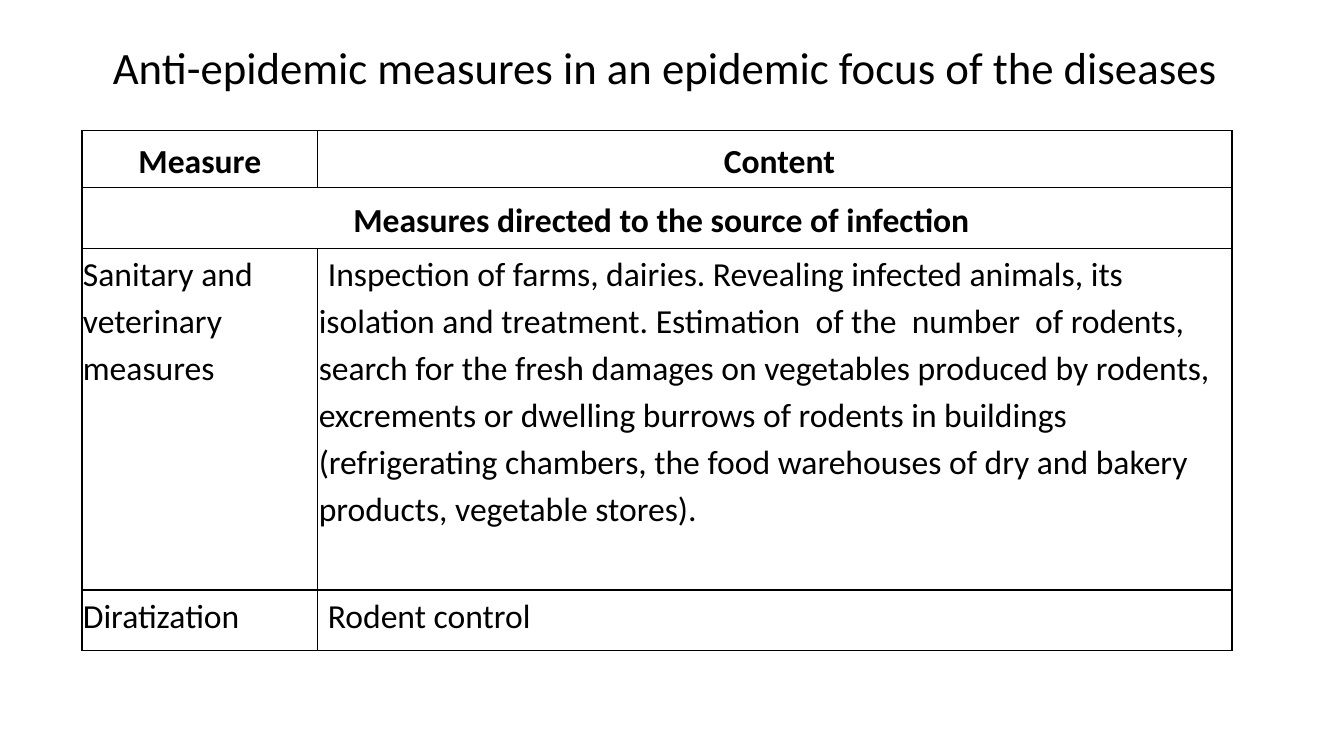
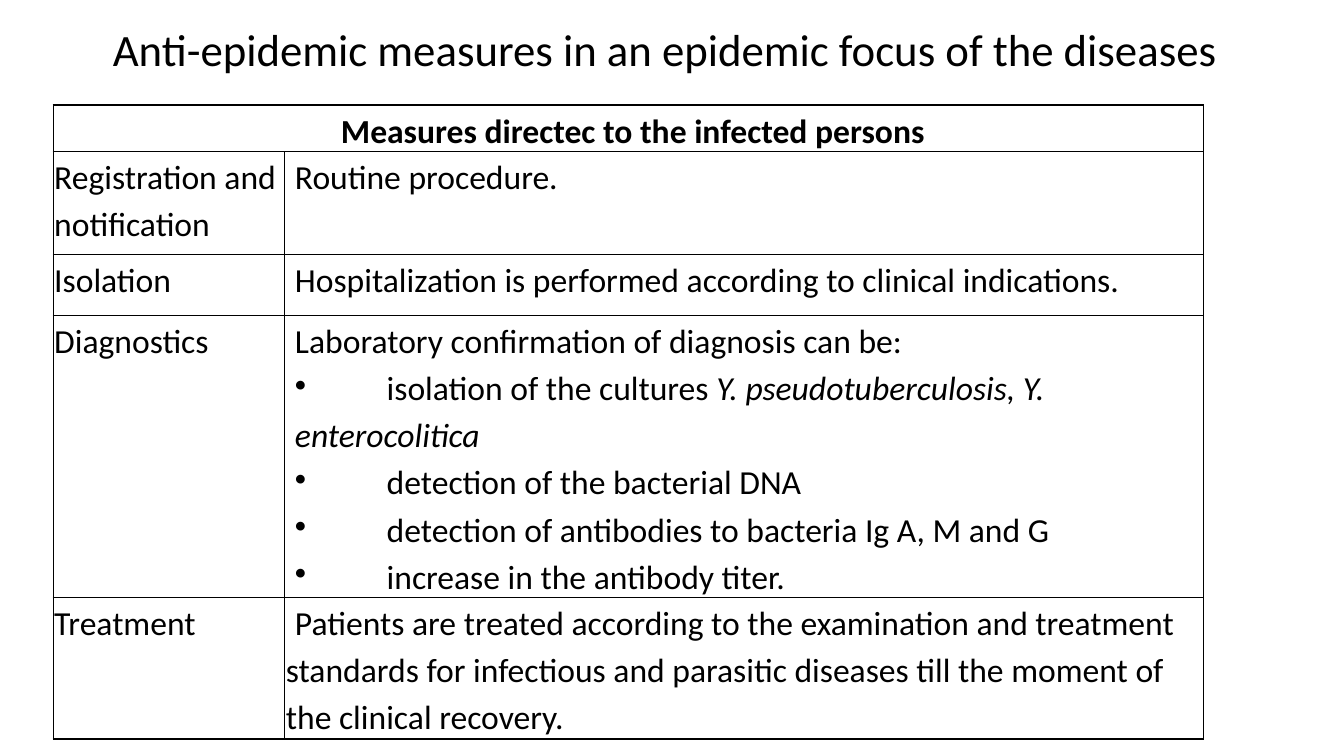
from dataclasses import dataclass

import lxml.etree
import pptx
import pptx.dml.color
import pptx.enum.text
import pptx.oxml.ns
import pptx.presentation
import pptx.slide
import pptx.table
import pptx.text.text
import pptx.util

Pt = pptx.util.Pt
qn = pptx.oxml.ns.qn
Align = pptx.enum.text.PP_ALIGN
Anchor = pptx.enum.text.MSO_ANCHOR

COLORS = {"text": "000000", "border": "000000", "cell": "FFFFFF"}
FONT = "Calibri"
TITLE = "Anti-epidemic measures in an epidemic focus of the diseases"
TABLE_WIDTH = 821.5
FIRST_LINE = 6.5
BULLET_TEXT = 72


@dataclass(frozen=True)
class Line:
    text: str
    italic: str = ""
    bold: bool = False
    centered: bool = False
    indent: float = FIRST_LINE
    bullet: bool = False


@dataclass(frozen=True)
class Row:
    height: float
    cells: tuple[tuple[Line, ...], ...]


@dataclass(frozen=True)
class MeasureSlide:
    title_top: float
    left: float
    top: float
    label_width: float
    rows: tuple[Row, ...]


def heading(text: str, indent: float = FIRST_LINE) -> tuple[Line, ...]:
    return (Line(text, bold=True, centered=True, indent=indent),)


def measure(height: float, label: str, *content: Line) -> Row:
    return Row(height, ((Line(label, indent=0),), content))


SLIDES = (
    MeasureSlide(29, 58.5, 93.5, 168.5, (
        Row(40.5, (heading("Measure", 0), heading("Content"))),
        Row(43.5, (heading("Measures directed to the source of infection"),)),
        measure(244, "Sanitary and veterinary measures", Line(
            "Inspection of farms, dairies. Revealing infected animals, its isolation and "
            "treatment. Estimation  of the  number  of rodents, search for the fresh damages "
            "on vegetables produced by rodents, excrements or dwelling burrows of rodents in "
            "buildings (refrigerating chambers, the food warehouses of dry and bakery "
            "products, vegetable stores).")),
        measure(43.5, "Diratization", Line("Rodent control")),
    )),
    MeasureSlide(16, 38, 75, 165.5, (
        Row(33.5, (heading("Measures directec to the infected persons"),)),
        measure(73.5, "Registration and notification", Line("Routine procedure.")),
        measure(43.5, "Isolation", Line(
            "Hospitalization is performed according to clinical indications.")),
        measure(
            201.5, "Diagnostics",
            Line("Laboratory confirmation of diagnosis can be:"),
            Line("isolation of the cultures ", italic="Y. pseudotuberculosis, Y.", bullet=True),
            Line("", italic="enterocolitica"),
            Line("detection of the bacterial DNA", bullet=True),
            Line("detection of antibodies to bacteria Ig A, M and G", bullet=True),
            Line("increase in the antibody titer.", bullet=True)),
        measure(101, "Treatment", Line(
            "Patients are treated according to the examination and treatment standards for "
            "infectious and parasitic diseases till the moment of the clinical recovery.")),
    )),
)


def rgb(name: str) -> pptx.dml.color.RGBColor:
    return pptx.dml.color.RGBColor.from_string(COLORS[name])


def style_paragraph(paragraph: pptx.text.text._Paragraph, size: float, spacing: float) -> None:
    paragraph.line_spacing = spacing
    paragraph.font.name = FONT
    paragraph.font.size = Pt(size)
    paragraph.font.color.rgb = rgb("text")


def write_line(paragraph: pptx.text.text._Paragraph, line: Line) -> None:
    style_paragraph(paragraph, 24, 1.15)
    paragraph.font.bold = line.bold
    paragraph.alignment = Align.CENTER if line.centered else Align.LEFT
    if line.text:
        paragraph.add_run().text = line.text
    if line.italic:
        run = paragraph.add_run()
        run.text = line.italic
        run.font.italic = True
    margin = BULLET_TEXT if line.bullet else 0
    properties = paragraph._p.get_or_add_pPr()
    properties.set("marL", str(Pt(margin)))
    properties.set("indent", str(Pt(line.indent - margin)))
    if line.bullet:
        bullet = lxml.etree.Element(qn("a:buChar"), char="•")
        properties.find(qn("a:defRPr")).addprevious(bullet)


def style_cell(cell: pptx.table._Cell) -> None:
    properties = cell._tc.get_or_add_tcPr()
    for side in ("a:lnL", "a:lnR", "a:lnT", "a:lnB"):
        border = lxml.etree.SubElement(properties, qn(side), w=str(Pt(1)))
        fill = lxml.etree.SubElement(border, qn("a:solidFill"))
        lxml.etree.SubElement(fill, qn("a:srgbClr"), val=COLORS["border"])
    cell.fill.solid()
    cell.fill.fore_color.rgb = rgb("cell")
    cell.margin_left = cell.margin_right = Pt(0.72)
    cell.margin_top = cell.margin_bottom = Pt(0)


def write_cell(cell: pptx.table._Cell, lines: tuple[Line, ...]) -> None:
    cell.vertical_anchor = Anchor.MIDDLE if lines[0].bold else Anchor.TOP
    frame = cell.text_frame
    for number, line in enumerate(lines):
        write_line(frame.add_paragraph() if number else frame.paragraphs[0], line)


def add_title(slide: pptx.slide.Slide, top: float) -> None:
    frame = slide.shapes.add_textbox(Pt(73.5), Pt(top), Pt(821), Pt(76)).text_frame
    frame.word_wrap = True
    frame.vertical_anchor = Anchor.TOP
    paragraph = frame.paragraphs[0]
    paragraph.text = TITLE
    style_paragraph(paragraph, 32, 0.9)


def add_measure_table(slide: pptx.slide.Slide, content: MeasureSlide) -> None:
    height = sum(row.height for row in content.rows)
    table = slide.shapes.add_table(
        len(content.rows), 2, Pt(content.left), Pt(content.top), Pt(TABLE_WIDTH), Pt(height)
    ).table
    table.first_row = table.horz_banding = False
    table.columns[0].width = Pt(content.label_width)
    table.columns[1].width = Pt(TABLE_WIDTH - content.label_width)
    for row_number, row in enumerate(content.rows):
        table.rows[row_number].height = Pt(row.height)
        for column in range(2):
            style_cell(table.cell(row_number, column))
        if len(row.cells) == 1:
            table.cell(row_number, 0).merge(table.cell(row_number, 1))
        for column, lines in enumerate(row.cells):
            write_cell(table.cell(row_number, column), lines)


def add_measure_slide(
    presentation: pptx.presentation.Presentation, content: MeasureSlide
) -> None:
    slide = presentation.slides.add_slide(presentation.slide_layouts[6])
    add_title(slide, content.title_top)
    add_measure_table(slide, content)


def main() -> None:
    presentation = pptx.Presentation()
    presentation.slide_width = Pt(960)
    presentation.slide_height = Pt(540)
    for content in SLIDES:
        add_measure_slide(presentation, content)
    presentation.save("out.pptx")


if __name__ == "__main__":
    main()
